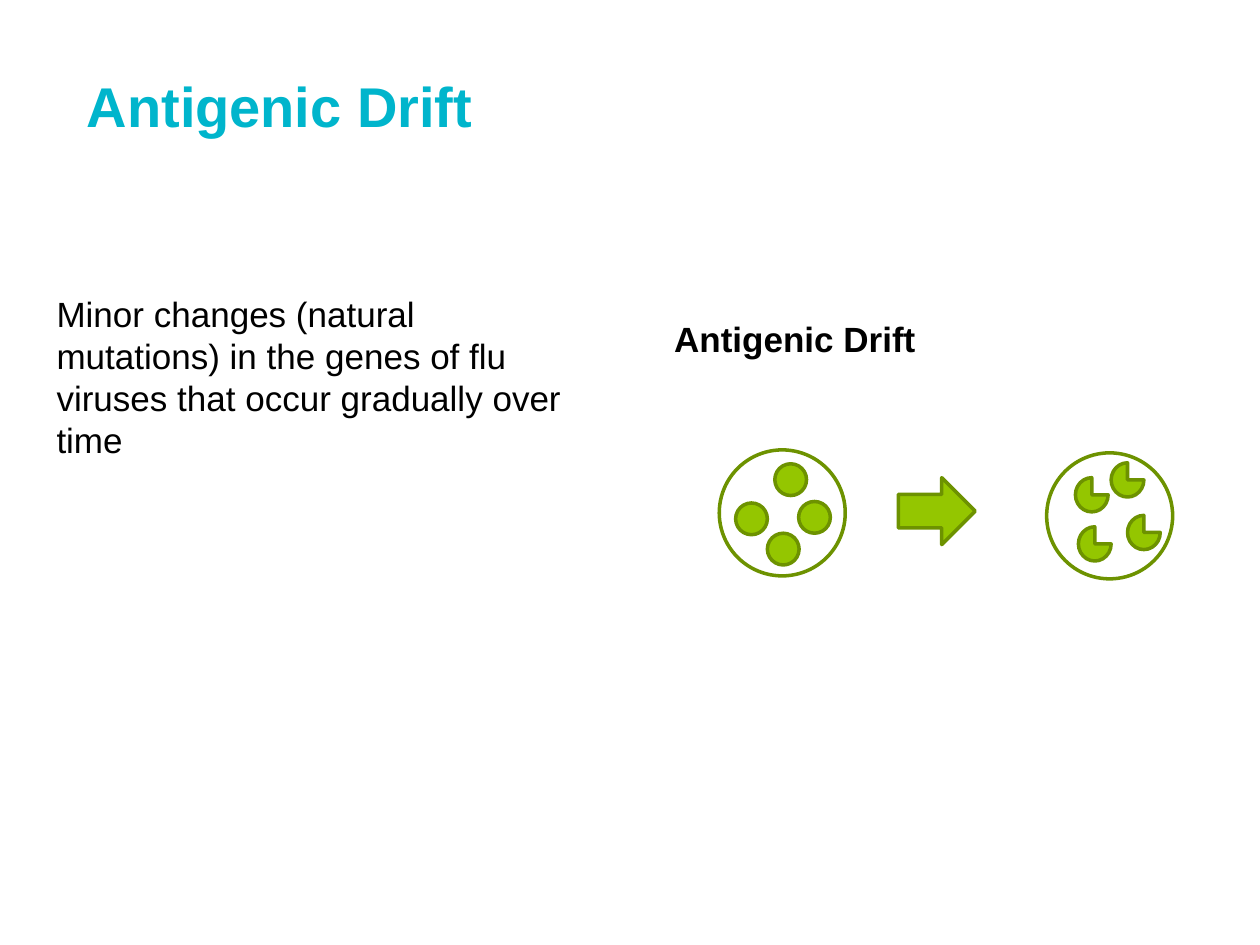
from dataclasses import dataclass

from pptx import Presentation
from pptx.dml.color import RGBColor
from pptx.enum.shapes import MSO_SHAPE
from pptx.enum.text import MSO_ANCHOR
from pptx.util import Cm, Pt

CIRCLE = MSO_SHAPE.OVAL
ANTIGEN = MSO_SHAPE.FLOWCHART_CONNECTOR
MUTATED_ANTIGEN = MSO_SHAPE.PIE
ARROW = MSO_SHAPE.RIGHT_ARROW
TOP, MIDDLE = MSO_ANCHOR.TOP, MSO_ANCHOR.MIDDLE


@dataclass(frozen=True)
class Theme:
    font: str = "Arial"
    heading: RGBColor = RGBColor(0x00, 0xB5, 0xCC)
    body: RGBColor = RGBColor(0x00, 0x00, 0x00)
    fill: RGBColor = RGBColor(0x94, 0xC6, 0x00)
    outline: RGBColor = RGBColor(0x6D, 0x92, 0x00)
    heading_size: int = 32
    body_size: int = 20
    line_width: int = 2


THEME = Theme()


def add_text(slide, box, wording, size, color, bold=False, anchor=TOP, inset=0.13):
    """Place one wrapped paragraph in a box given in cm."""
    frame = slide.shapes.add_textbox(*map(Cm, box)).text_frame
    frame.word_wrap = True
    frame.vertical_anchor = anchor
    frame.margin_top = Cm(inset)
    run = frame.paragraphs[0].add_run()
    run.text = wording
    run.font.name = THEME.font
    run.font.size = Pt(size)
    run.font.bold = bold
    run.font.color.rgb = color


def add_outlined(shapes, kind, box, filled=True):
    """Place one green-outlined shape in a box given in cm."""
    part = shapes.add_shape(kind, *map(Cm, box))
    part.shadow.inherit = False
    if filled:
        part.fill.solid()
        part.fill.fore_color.rgb = THEME.fill
    else:
        part.fill.background()
    part.line.color.rgb = THEME.outline
    part.line.width = Pt(THEME.line_width)


def add_title(slide, box):
    add_text(slide, box, "Antigenic Drift", THEME.heading_size, THEME.heading,
             bold=True, anchor=MIDDLE)


def add_column(slide, box, wording, bold=False):
    """Place body text that starts below the column's clear top band."""
    add_text(slide, box, wording, THEME.body_size, THEME.body, bold, inset=2.16)


def add_virus(slide, box, antigen, antigen_size, offsets):
    """Draw a virus circle with antigens offset from its top left corner."""
    left, top, _, _ = box
    virus = slide.shapes.add_group_shape().shapes
    add_outlined(virus, CIRCLE, box, filled=False)
    for dx, dy in offsets:
        add_outlined(virus, antigen, (left + dx, top + dy, *antigen_size))


def add_drift_diagram(slide, box):
    """Draw the virus before and after drift, with an arrow between them."""
    left, top, width, _ = box
    diameter = 2.54
    add_virus(slide, (left, top, diameter, diameter), ANTIGEN, (0.64, 0.64),
              [(0.33, 1.07), (0.97, 1.68), (1.6, 1.04), (1.12, 0.28)])
    add_outlined(slide.shapes, ARROW, (left + 3.61, top + 0.56, 1.55, 1.35))
    add_virus(slide, (left + width - diameter, top + 0.06, diameter, diameter),
              MUTATED_ANTIGEN, (0.66, 0.69),
              [(0.58, 0.5), (0.64, 1.49), (1.3, 0.2), (1.63, 1.26)])


def main():
    deck = Presentation()
    deck.slide_width, deck.slide_height = Cm(25.4), Cm(19.05)
    slide = deck.slides.add_slide(deck.slide_layouts[6])

    # Title
    add_title(slide, (1.5, 0.53, 22.43, 3.18))

    # Definition and diagram heading
    add_column(slide, (0.89, 3.73, 11, 11.23),
               "Minor changes (natural mutations) in the genes of flu viruses "
               "that occur gradually over time")
    add_column(slide, (13.34, 4.24, 11, 11.23), "Antigenic Drift", bold=True)

    # Drift diagram
    add_drift_diagram(slide, (14.5, 9.07, 9.14, 2.6))

    deck.save("out.pptx")


if __name__ == "__main__":
    main()
